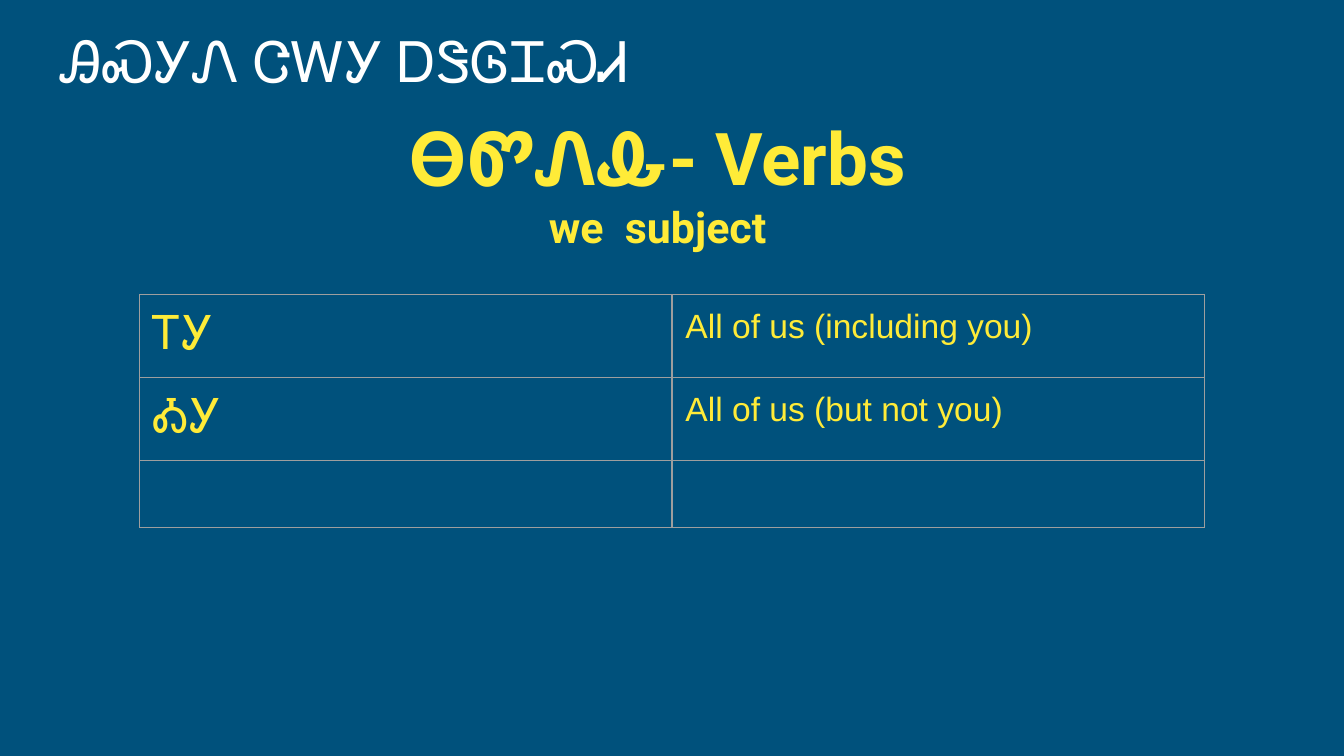
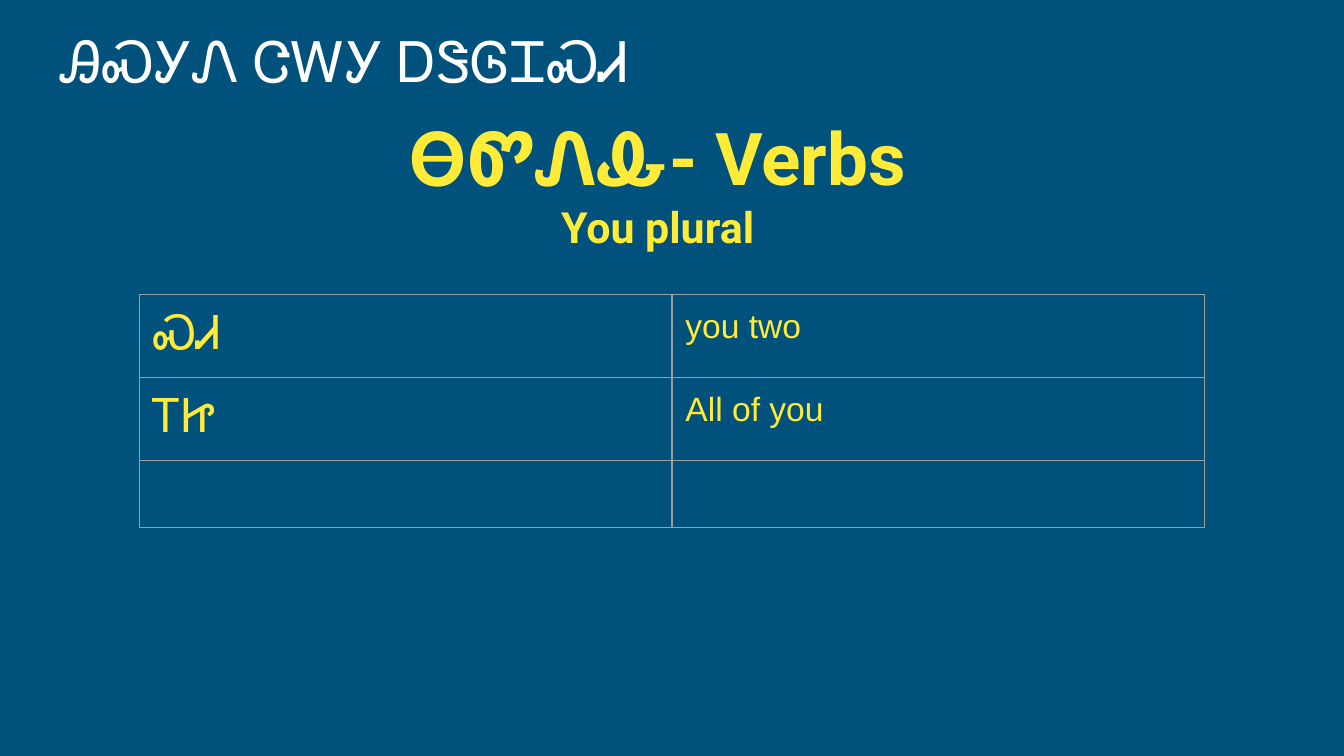
from lxml.etree import SubElement
from pptx import Presentation
from pptx.dml.color import RGBColor
from pptx.enum.text import MSO_ANCHOR, PP_ALIGN
from pptx.oxml.ns import qn
from pptx.util import Inches, Pt

# Content
TITLE = "ᎯᏍᎩᏁ ᏣᎳᎩ ᎠᏕᎶᏆᏍᏗ"
HEADING = "ᎾᏛᏁᎲ- Verbs"
LESSONS = [
    {
        "subject": "we  subject",
        "pronouns": [("ᎢᎩ", "All of us (including you)"), ("ᎣᎩ", "All of us (but not you)"), ("", "")],
    },
    {
        "subject": "You plural",
        "pronouns": [("ᏍᏗ", "you two"), ("ᎢᏥ", "All of you"), ("", "")],
    },
]

# Shared style
SLIDE_WIDTH = 10
SLIDE_HEIGHT = SLIDE_WIDTH * 9 / 16
COLORS = {"background": "00517C", "title": "FFFFFF", "accent": "FFEB38", "border": "9E9E9E"}
COLUMN_SIZES = (25, 18)
COLUMN_WIDTH, ROW_HEIGHT = 3.96, 0.42
MARGIN = Inches(0.1)


def color(name):
    return RGBColor.from_string(COLORS[name])


def format_paragraph(paragraph, font_name, size, color_name, bold=False):
    for run in paragraph.runs:
        run.font.size = Pt(size)
        run.font.bold = bold
        run.font.color.rgb = color(color_name)
        run.font.name = font_name
        # Cherokee syllables may use the East Asian or complex script font
        for tag in ("a:ea", "a:cs"):
            SubElement(run._r.get_or_add_rPr(), qn(tag), typeface=font_name)


def set_margins(target):
    target.margin_left = target.margin_right = MARGIN
    target.margin_top = target.margin_bottom = MARGIN


def add_text_frame(slide, left, top, width, height):
    text_frame = slide.shapes.add_textbox(
        Inches(left), Inches(top), Inches(width), Inches(height)).text_frame
    text_frame.word_wrap = True
    set_margins(text_frame)
    return text_frame


def add_title(slide):
    text_frame = add_text_frame(slide, 0.36, 0.05, 9.15, 0.75)
    text_frame.vertical_anchor = MSO_ANCHOR.BOTTOM
    text_frame.text = TITLE
    format_paragraph(text_frame.paragraphs[0], "Roboto Slab", 30, "title")


def add_heading(slide, subject):
    text_frame = add_text_frame(slide, 2.51, 0.74, 4.77, 1.25)
    text_frame.text = f"{HEADING}\n{subject}"
    for paragraph, size in zip(text_frame.paragraphs, (39, 23)):
        paragraph.alignment = PP_ALIGN.CENTER
        format_paragraph(paragraph, "Roboto", size, "accent", bold=True)


def add_borders(cell):
    properties = cell._tc.get_or_add_tcPr()
    for position, side in enumerate(("a:lnL", "a:lnR", "a:lnT", "a:lnB")):
        line = SubElement(properties, qn(side), w=str(Pt(0.75)))
        fill = SubElement(line, qn("a:solidFill"))
        SubElement(fill, qn("a:srgbClr"), val=COLORS["border"])
        properties.insert(position, line)


def add_pronoun_table(slide, pronouns):
    columns = len(COLUMN_SIZES)
    table = slide.shapes.add_table(
        len(pronouns), columns, Inches(1.04), Inches(2.19),
        Inches(COLUMN_WIDTH * columns), Inches(ROW_HEIGHT * len(pronouns))).table
    table.first_row = table.horz_banding = False
    for row_index, row in enumerate(pronouns):
        for column_index, (text, size) in enumerate(zip(row, COLUMN_SIZES)):
            cell = table.cell(row_index, column_index)
            set_margins(cell)
            cell.fill.background()
            add_borders(cell)
            if text:
                cell.text_frame.text = text
                format_paragraph(cell.text_frame.paragraphs[0], "Arial", size, "accent")


def main():
    presentation = Presentation()
    presentation.slide_width = Inches(SLIDE_WIDTH)
    presentation.slide_height = Inches(SLIDE_HEIGHT)
    for lesson in LESSONS:
        slide = presentation.slides.add_slide(presentation.slide_layouts[6])
        slide.background.fill.solid()
        slide.background.fill.fore_color.rgb = color("background")
        add_title(slide)
        add_heading(slide, lesson["subject"])
        add_pronoun_table(slide, lesson["pronouns"])
    presentation.save("out.pptx")


if __name__ == "__main__":
    main()
